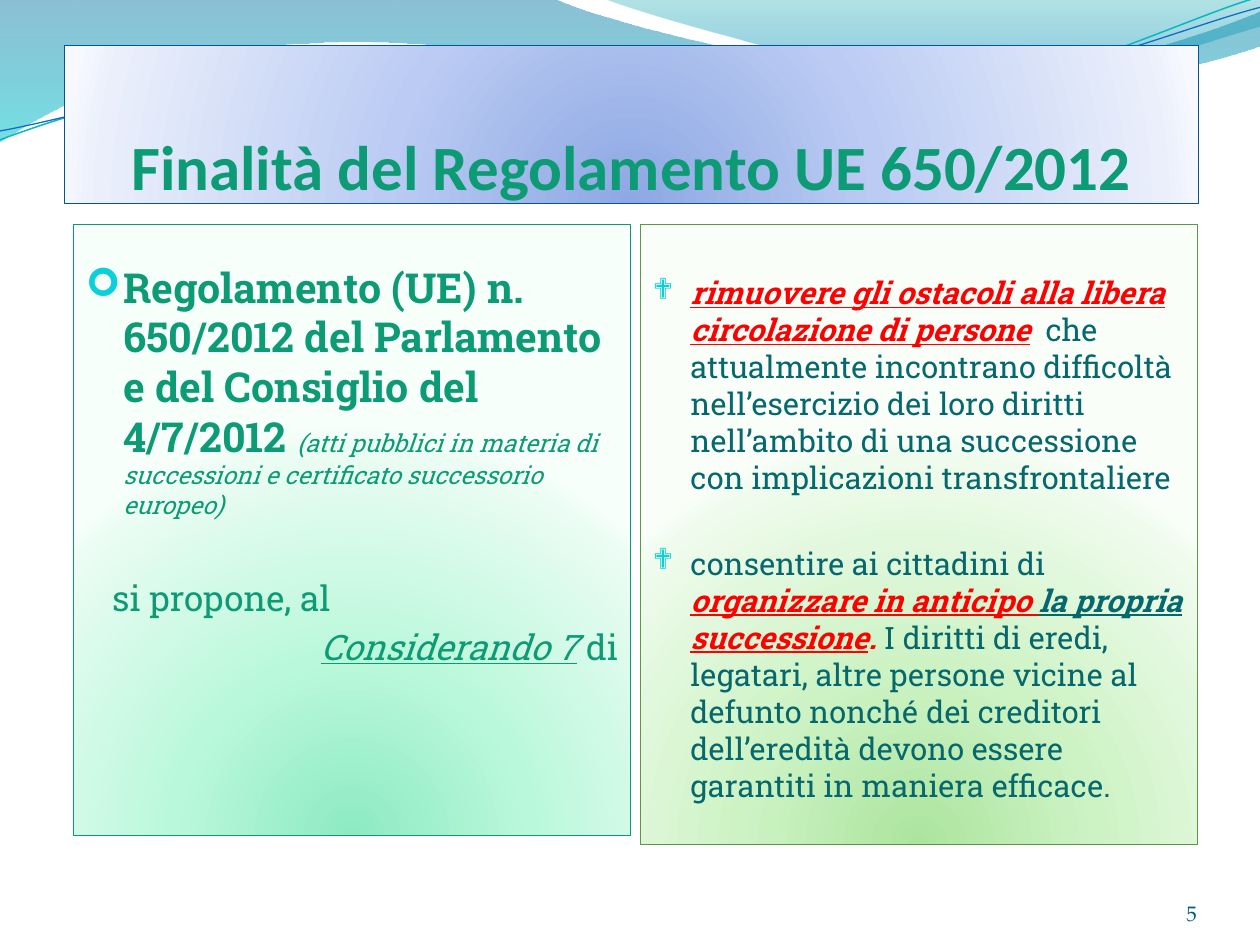
"""Builds the slide on the aims of EU Regulation 650/2012."""
import pptx
import pptx.dml.color
import pptx.enum.shapes
import pptx.enum.text
import pptx.oxml
import pptx.oxml.ns
import pptx.util

Cm = pptx.util.Cm
Pt = pptx.util.Pt
RGBColor = pptx.dml.color.RGBColor
Align = pptx.enum.text.PP_ALIGN
Anchor = pptx.enum.text.MSO_ANCHOR
qn = pptx.oxml.ns.qn
NAMESPACE = pptx.oxml.ns.nsdecls("a")

GREEN = RGBColor(0x0C, 0x9B, 0x74)
TEAL = RGBColor(0x06, 0x68, 0x6C)
RED = RGBColor(0xFF, 0x00, 0x00)
BULLET = RGBColor(0x0B, 0xD0, 0xD9)
NUMBER = RGBColor(0x04, 0x5D, 0x75)
TITLE_EDGE = RGBColor(0x09, 0x52, 0x95)
LEFT_EDGE = RGBColor(0x0A, 0x9B, 0x74)
RIGHT_EDGE = RGBColor(0x5B, 0x97, 0x47)
CYAN_LINE = RGBColor(0x0A, 0xB8, 0xBF)
BLUE_LINE = RGBColor(0x0F, 0x6F, 0xC6)
DEEP_BLUE = RGBColor(0x00, 0x74, 0xA1)
AQUA = RGBColor(0x00, 0xC6, 0xCF)
DEEP_TEAL = RGBColor(0x00, 0xA1, 0xA9)
SKY = RGBColor(0x00, 0x8B, 0xBF)
BLUE_GLOW = [RGBColor(0x8D, 0xA8, 0xE3), RGBColor(0xBB, 0xCB, 0xF3),
             RGBColor(0xEA, 0xEF, 0xFB), RGBColor(0xF7, 0xF9, 0xFF)]
MINT_GLOW = [RGBColor(0x8D, 0xEA, 0xC2), RGBColor(0xBA, 0xF8, 0xDB),
             RGBColor(0xEA, 0xFC, 0xF3), RGBColor(0xF7, 0xFF, 0xFB)]
LEAF_GLOW = [RGBColor(0xAC, 0xE4, 0x9F), RGBColor(0xCD, 0xF3, 0xC4),
             RGBColor(0xEF, 0xFB, 0xED), RGBColor(0xF9, 0xFF, 0xF8)]
GLOW_STOPS = (0, 43, 93, 100)
GLOW = ('<a:path path="circle"><a:fillToRect l="50000" t="130000" '
        'r="50000" b="-30000"/></a:path>')
DOWNWARD = '<a:lin ang="5400000" scaled="0"/>'

WIDE_WAVE = [
    [(11.18, -0.03)],
    [(12.09, 0.43), (16.87, 1.6), (19.25, 1.6)],
    [(21.67, 1.6), (24.33, 0.66), (25.4, 0.23)],
    [(25.43, 0.91)],
    [(24.97, 1.12), (22.1, 1.93), (18.95, 1.91)],
    [(15.8, 1.91), (9.7, 0.71), (6.53, 0.86)],
    [(3.28, 0.91), (1.17, 2.11), (-0.03, 2.87)],
    [(0, 0)],
]
RIGHT_WAVE = [
    [(12.93, 0.28), (17.32, 1.57), (19.53, 1.65)],
    [(21.74, 1.75), (24.41, 0.81), (25.4, 0.53)],
    [(25.4, 0)],
    [(12.17, -0.03)],
]
CYAN_CURVE = [
    [(1.22, 2.36), (4.01, 1.45), (7.04, 1.32)],
    [(10.03, 1.19), (15.06, 2.26), (18.11, 2.03)],
    [(21.16, 1.8), (23.83, 0.38), (25.35, -0.05)],
]
BLUE_CURVE = [
    [(1.19, 2.44), (4.17, 1.55), (7.19, 1.42)],
    [(10.24, 1.3), (15.16, 2.13), (18.21, 1.91)],
    [(21.23, 1.7), (23.9, 0.53), (25.4, 0.15)],
]


class SlideWriter:
    """Holds the style and the current slide."""

    body_font = "Roboto Slab"

    def __init__(self, deck):
        self.page = deck.slides.add_slide(deck.slide_layouts[6])

    def gradient(self, shape, stops, shade):
        shape.fill.background()
        marks = "".join(
            f'<a:gs pos="{place * 1000}"><a:srgbClr val="{color}">'
            f'<a:alpha val="{alpha * 1000}"/></a:srgbClr></a:gs>'
            for place, color, alpha in stops)
        fill = pptx.oxml.parse_xml(
            f'<a:gradFill {NAMESPACE} rotWithShape="1">'
            f'<a:gsLst>{marks}</a:gsLst>{shade}</a:gradFill>')
        properties = shape.element.spPr
        properties.replace(properties.find(qn("a:noFill")), fill)

    def outline(self, start, segments, closed):
        builder = self.page.shapes.build_freeform(Cm(start[0]), Cm(start[1]))
        builder.add_line_segments(
            [(Cm(x), Cm(y)) for segment in segments for x, y in segment], close=closed)
        shape = builder.convert_to_shape()
        shape.shadow.inherit = False
        lines = iter(list(shape.element.spPr.iter(qn("a:lnTo"))))
        for segment in segments:
            first, *others = [next(lines) for point in segment]
            if others:
                first.tag = qn("a:cubicBezTo")
            for line in others:
                first.append(line[0])
                line.getparent().remove(line)
        return shape

    def wave(self, start, segments, stops):
        shape = self.outline(start, segments, True)
        shape.line.fill.background()
        self.gradient(shape, stops, DOWNWARD)

    def curve(self, start, segments, color, width):
        shape = self.outline(start, segments, False)
        shape.fill.background()
        shape.line.color.rgb = color
        shape.line.width = Pt(width)

    def panel(self, left, top, width, height, glow, edge, inset_top):
        box = self.page.shapes.add_shape(
            pptx.enum.shapes.MSO_SHAPE.RECTANGLE, Cm(left), Cm(top), Cm(width), Cm(height))
        box.shadow.inherit = False
        self.gradient(box, [(place, color, 100) for place, color in zip(GLOW_STOPS, glow)], GLOW)
        box.line.color.rgb = edge
        box.line.width = Pt(0.75)
        frame = box.text_frame
        frame.word_wrap = True
        frame.margin_top = Cm(inset_top)
        frame.vertical_anchor = Anchor.TOP
        return frame

    def para(self, frame, spans, size, color, font=body_font, align=Align.LEFT,
             before=0, bullet=None, indent=0):
        para = frame.paragraphs[0]
        if para.runs:
            para = frame.add_paragraph()
        para.alignment = align
        para.space_before = Pt(before)
        properties = para._p.get_or_add_pPr()
        properties.set("marL", str(Cm(indent)))
        if bullet:
            properties.set("indent", str(-Cm(indent)))
            for mark in (f'buClr {NAMESPACE}><a:srgbClr val="{BULLET}"/></a:buClr>',
                         f'buSzPct {NAMESPACE} val="95000"/>',
                         f'buFont {NAMESPACE} typeface="Wingdings"/>',
                         f'buChar {NAMESPACE} char="{bullet}"/>'):
                properties.append(pptx.oxml.parse_xml("<a:" + mark))
        para.font.name = font
        para.font.size = Pt(size)
        para.font.color.rgb = color
        for text, style in spans:
            span = para.add_run()
            span.text = text
            span.font.bold = "b" in style
            span.font.italic = "i" in style
            span.font.underline = "u" in style
            if "r" in style:
                span.font.color.rgb = RED
            if "s" in style:
                span.font.size = Pt(14)

    def number(self, text):
        box = self.page.shapes.add_textbox(Cm(22.02), Cm(17.65), Cm(2.11), Cm(1.02))
        frame = box.text_frame
        frame.word_wrap = True
        frame.vertical_anchor = Anchor.BOTTOM
        frame.margin_left = frame.margin_right = frame.margin_top = frame.margin_bottom = 0
        self.para(frame, [(text, "")], 12, NUMBER, "TeX Gyre Pagella", Align.RIGHT)


def main():
    deck = pptx.Presentation()
    deck.slide_width, deck.slide_height = Cm(25.4), Cm(19.05)
    writer = SlideWriter(deck)
    writer.wave((0, 0), WIDE_WAVE, [(0, DEEP_BLUE, 45), (100, AQUA, 55)])
    writer.wave((12.17, -0.03), RIGHT_WAVE, [(0, DEEP_TEAL, 30), (80, SKY, 45)])
    writer.curve((0, 2.82), CYAN_CURVE, CYAN_LINE, 0.85)
    writer.curve((0, 2.64), BLUE_CURVE, BLUE_LINE, 0.75)

    title = writer.panel(1.3, 0.92, 22.86, 3.18, BLUE_GLOW, TITLE_EDGE, 0.13)
    title.vertical_anchor = Anchor.BOTTOM
    title.margin_left = title.margin_right = title.margin_bottom = 0
    writer.para(title, [("Finalità del Regolamento UE 650/2012", "b")], 36, GREEN,
                "Calibri", Align.CENTER)

    left = writer.panel(1.48, 4.52, 11.23, 12.32, MINT_GLOW, LEFT_EDGE, 0.76)
    writer.para(left, [
        ("Regolamento (UE) n. 650/2012 del Parlamento e del Consiglio del 4/7/2012 ", "b"),
        ("(atti pubblici in materia di successioni e certificato successorio europeo)", "is"),
    ], 23.6, GREEN, bullet="➢", indent=0.76)
    writer.para(left, [("si propone, al", "")], 20, GREEN, before=32.5, indent=0.53)
    writer.para(left, [("Considerando 7", "iu"), (" di", "")], 20, GREEN,
                align=Align.RIGHT, before=4)

    right = writer.panel(12.91, 4.52, 11.23, 12.5, LEAF_GLOW, RIGHT_EDGE, 1)
    writer.para(right, [
        ("rimuovere gli ostacoli alla libera circolazione di persone", "biur"),
        ("  che attualmente incontrano difficoltà nell’esercizio dei loro diritti "
         "nell’ambito di una successione con implicazioni transfrontaliere", ""),
    ], 17.6, TEAL, bullet="❖", indent=0.76)
    writer.para(right, [
        ("consentire ai cittadini di ", ""),
        ("organizzare in anticipo ", "biur"),
        ("la propria ", "biu"),
        ("successione", "biur"),
        (". ", "bir"),
        ("I diritti di eredi, legatari, altre persone vicine al defunto nonché dei "
         "creditori dell’eredità devono essere garantiti in maniera efficace.", ""),
    ], 17.6, TEAL, before=28, bullet="❖", indent=0.76)
    writer.number("5")
    deck.save("out.pptx")


if __name__ == "__main__":
    main()
